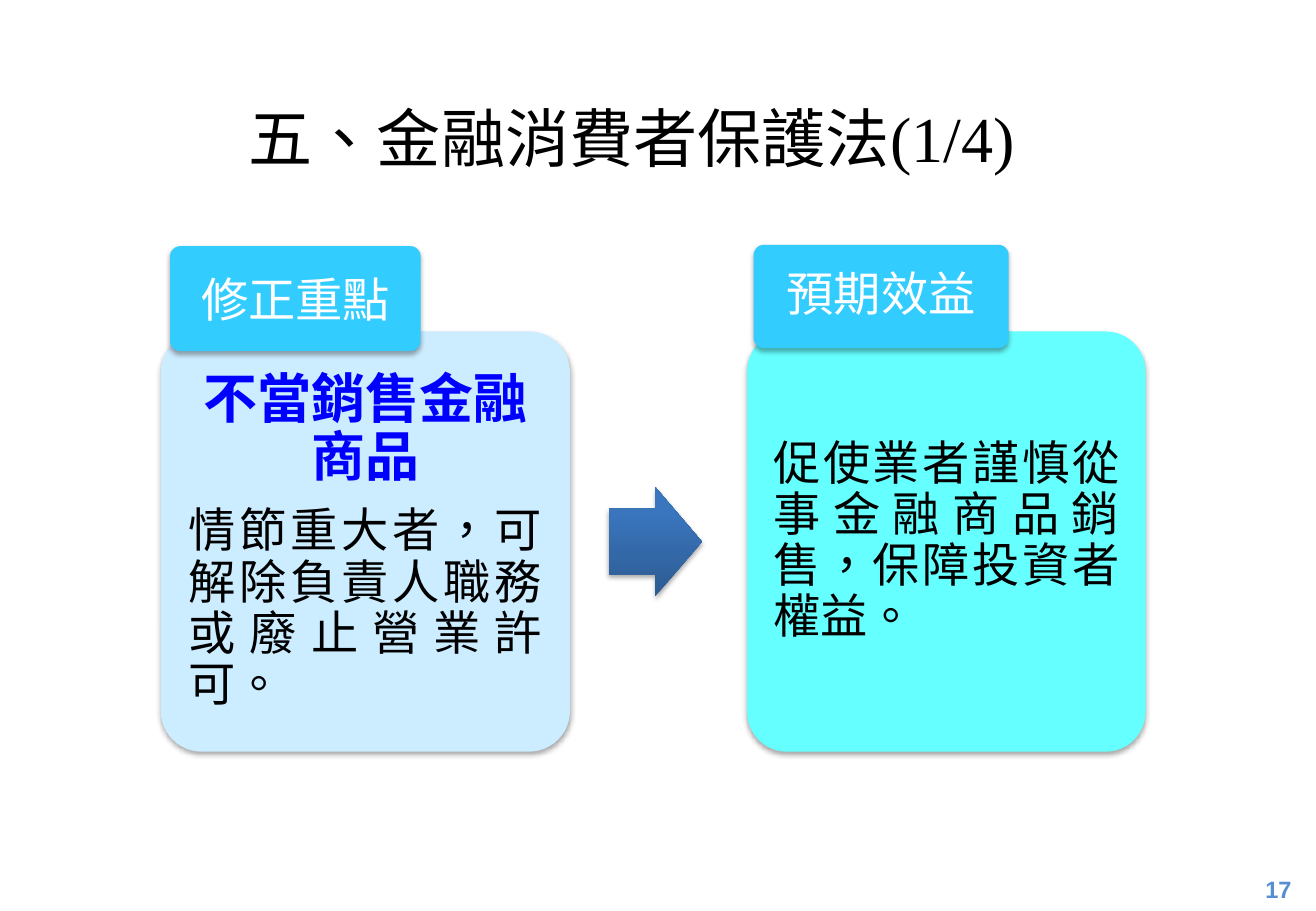
"""Build the slide on the Financial Consumer Protection Act amendment."""
from typing import NamedTuple

from lxml.etree import SubElement
from pptx import Presentation
from pptx.dml.color import RGBColor
from pptx.enum.lang import MSO_LANGUAGE_ID as Lang
from pptx.enum.shapes import MSO_SHAPE as Preset
from pptx.enum.text import MSO_ANCHOR as Anchor, MSO_AUTO_SIZE as AutoSize, PP_ALIGN as Align
from pptx.oxml.ns import qn
from pptx.shapes.autoshape import Shape
from pptx.slide import Slide
from pptx.text.text import TextFrame
from pptx.util import Pt

BLACK = RGBColor(0x00, 0x00, 0x00)
WHITE = RGBColor(0xFF, 0xFF, 0xFF)
BLUE = RGBColor(0x00, 0x00, 0xFF)
PALE_BLUE = RGBColor(0xCC, 0xEC, 0xFF)
AQUA = RGBColor(0x66, 0xFF, 0xFF)
SKY = RGBColor(0x33, 0xCC, 0xFF)
PAGE_BLUE = RGBColor(0x55, 0x8E, 0xD5)
ARROW_DARK = RGBColor(0x2D, 0x5B, 0x92)
ARROW_LIGHT = RGBColor(0x3A, 0x76, 0xBE)
SERIF = "Times New Roman"


class Box(NamedTuple):
    left: float
    top: float
    width: float
    height: float


class Line(NamedTuple):
    text: str
    size: float = 28
    color: RGBColor = BLACK
    align: Align = Align.JUSTIFY
    bold: bool = False
    font: str = SERIF
    spacing: float = 1.0
    after: float = 0


class Panel(NamedTuple):
    box: Box
    fill: RGBColor
    inset_x: float
    inset_y: float
    lines: list[Line]


PANELS = [
    Panel(Box(95.3, 196.5, 242.6, 249.1), PALE_BLUE, 9.4, 9.4, [
        Line("不當銷售金融商品", 32, BLUE, Align.CENTER, True, spacing=0.9, after=11),
        Line("情節重大者，可解除負責人職務或廢止營業許可。", spacing=0.9, after=10),
    ]),
    Panel(Box(442.8, 196.5, 236.2, 249.1), AQUA, 8.6, 8.6, [
        Line("促使業者謹慎從事金融商品銷售，保障投資者權益。", spacing=0.9, after=10),
    ]),
    Panel(Box(100.8, 145.9, 148.6, 62.2), SKY, 4.3, 2.9, [
        Line("修正重點", color=WHITE, align=Align.CENTER),
    ]),
    Panel(Box(446.7, 145.1, 151.2, 61.2), SKY, 4.3, 2.9, [
        Line("預期效益", color=WHITE, align=Align.CENTER, spacing=0.9, after=10),
    ]),
]


def write(frame: TextFrame, lines: list[Line], anchor: Anchor) -> None:
    frame.word_wrap = True
    frame.auto_size = AutoSize.NONE
    frame.vertical_anchor = anchor
    for index, line in enumerate(lines):
        paragraph = frame.add_paragraph() if index else frame.paragraphs[0]
        paragraph.alignment = line.align
        paragraph.line_spacing = line.spacing
        paragraph.space_after = Pt(line.after)
        paragraph._p.get_or_add_pPr().set("hangingPunct", "0")
        paragraph.font.name = line.font
        paragraph.font.size = Pt(line.size)
        paragraph.font.bold = line.bold
        paragraph.font.color.rgb = line.color
        run = paragraph.add_run()
        run.text = line.text
        run.font.language_id = Lang.TRADITIONAL_CHINESE


def add_soft_shape(slide: Slide, preset: Preset, box: Box) -> Shape:
    shape = slide.shapes.add_shape(preset, *map(Pt, box))
    shape.line.fill.background()
    shape.shadow.inherit = False
    effects = shape.element.spPr.find(qn("a:effectLst"))
    shadow = SubElement(effects, qn("a:outerShdw"), blurRad=str(Pt(3.1)),
                        dist=str(Pt(1.8)), dir="5400000", rotWithShape="0")
    tint = SubElement(shadow, qn("a:srgbClr"), val=str(BLACK))
    SubElement(tint, qn("a:alpha"), val="35000")
    return shape


def add_panel(slide: Slide, panel: Panel) -> None:
    shape = add_soft_shape(slide, Preset.ROUNDED_RECTANGLE, panel.box)
    shape.adjustments[0] = 0.1
    shape.fill.solid()
    shape.fill.fore_color.rgb = panel.fill
    frame = shape.text_frame
    frame.margin_left = frame.margin_right = Pt(panel.inset_x)
    frame.margin_top = frame.margin_bottom = Pt(panel.inset_y)
    write(frame, panel.lines, Anchor.MIDDLE)


def add_arrow(slide: Slide, box: Box) -> None:
    arrow = add_soft_shape(slide, Preset.RIGHT_ARROW, box)
    arrow.adjustments[0] = 0.6
    arrow.adjustments[1] = 0.5
    arrow.fill.gradient()
    arrow.fill.gradient_angle = 90
    dark, light = arrow.fill.gradient_stops
    dark.position, dark.color.rgb = 0, ARROW_DARK
    light.position, light.color.rgb = 0.8, ARROW_LIGHT


def main() -> None:
    deck = Presentation()
    deck.slide_width, deck.slide_height = Pt(780), Pt(540)
    slide = deck.slides.add_slide(deck.slide_layouts[5])

    title = slide.shapes.title
    title.left, title.top, title.width, title.height = map(Pt, Box(140.2, 54.7, 499, 53.3))
    write(title.text_frame, [Line("五、金融消費者保護法(1/4)", 38)], Anchor.TOP)

    page_number = slide.shapes.add_textbox(*map(Pt, Box(735.8, 514, 44, 26)))
    write(page_number.text_frame,
          [Line("17", 14, PAGE_BLUE, Align.CENTER, True, "Arial")], Anchor.MIDDLE)

    for panel in PANELS:
        add_panel(slide, panel)
    add_arrow(slide, Box(360.7, 288.7, 55.4, 64.8))
    deck.save("out.pptx")


if __name__ == "__main__":
    main()
